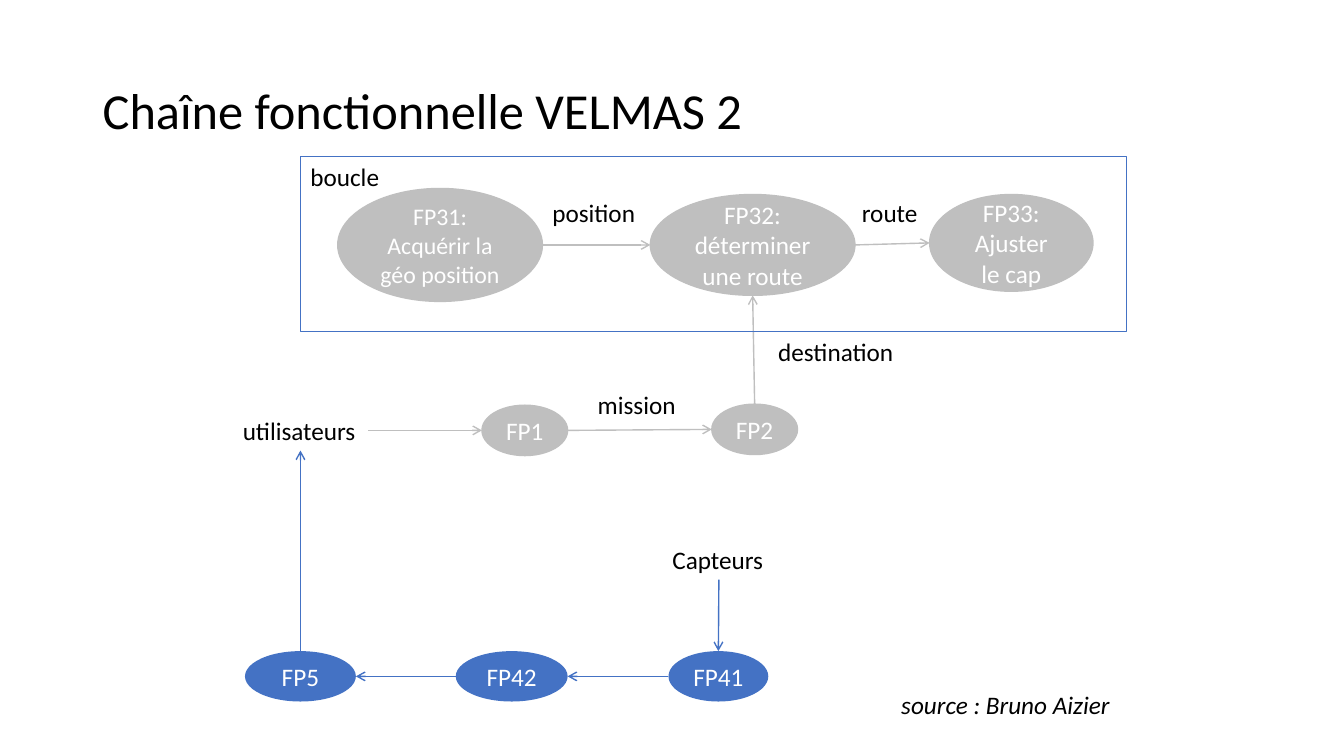
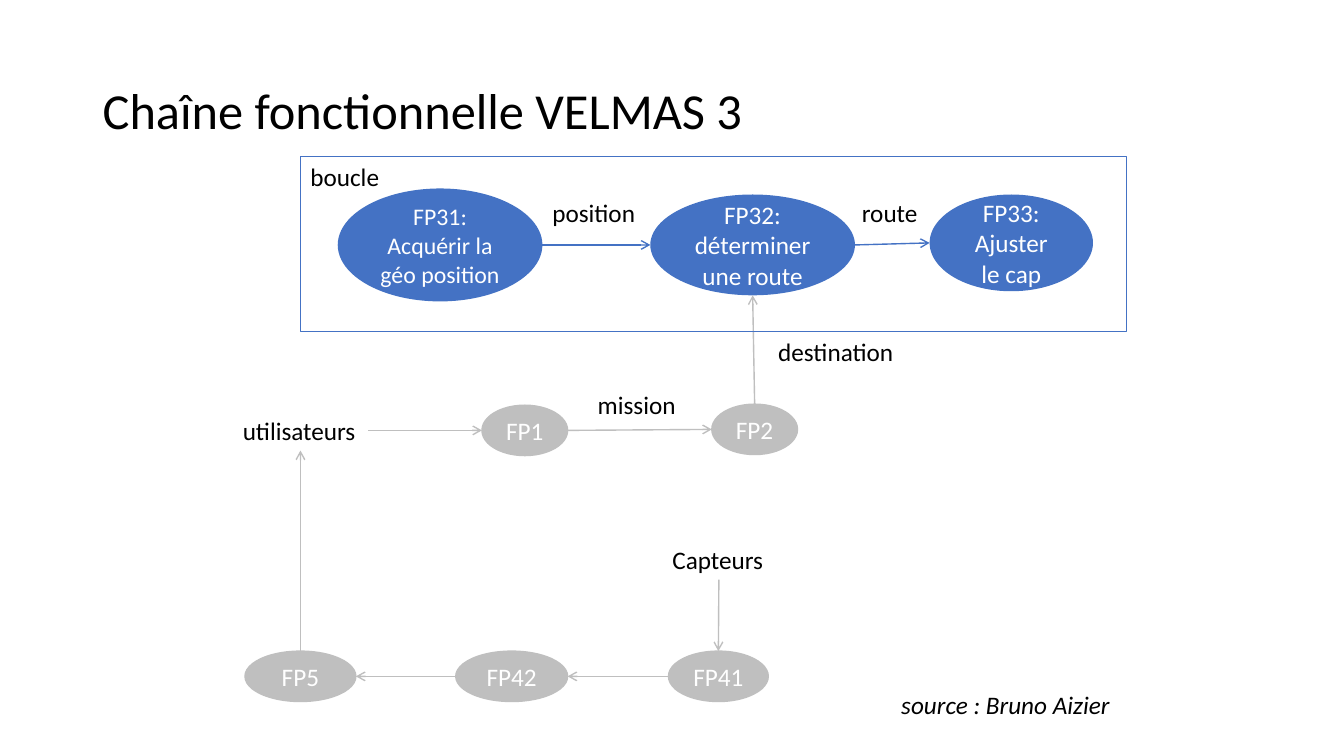
from lxml import etree
from pptx import Presentation
from pptx.dml.color import RGBColor
from pptx.enum.shapes import MSO_CONNECTOR, MSO_SHAPE
from pptx.enum.text import MSO_ANCHOR, MSO_AUTO_SIZE, PP_ALIGN
from pptx.oxml.ns import qn
from pptx.util import Inches, Pt

STRAIGHT = MSO_CONNECTOR.STRAIGHT
ELLIPSE, RECTANGLE = MSO_SHAPE.OVAL, MSO_SHAPE.RECTANGLE
TOP, MIDDLE = MSO_ANCHOR.TOP, MSO_ANCHOR.MIDDLE
LEFT, CENTER = PP_ALIGN.LEFT, PP_ALIGN.CENTER
GROW = MSO_AUTO_SIZE.SHAPE_TO_FIT_TEXT

BLACK = RGBColor(0x00, 0x00, 0x00)
WHITE = RGBColor(0xFF, 0xFF, 0xFF)
ACTIVE = RGBColor(0x44, 0x72, 0xC4)
INACTIVE = RGBColor(0xBF, 0xBF, 0xBF)

BODY_FONT = {"name": "Calibri", "size": Pt(18)}
TITLE_FONT = {**BODY_FONT, "size": Pt(36)}
COMPACT_FONT = {**BODY_FONT, "size": Pt(17)}
SOURCE_FONT = {**BODY_FONT, "italic": True}

TITLE_FRAME = {"word_wrap": True, "vertical_anchor": MIDDLE}
LABEL_FRAME = {"word_wrap": False, "auto_size": GROW}
LOOP_FRAME = {"word_wrap": True, "vertical_anchor": TOP}

TITLE_BOX = (0.92, 0.4, 11.5, 1.45)
LOOP_BOX = (2.98, 1.55, 8.19, 1.74)
SOURCE_BOX = (8.84, 6.79, 2.35, 0.4)

FUNCTIONS = {
    "FP1": ((4.78, 4.02, 0.85, 0.5), "FP1", BODY_FONT),
    "FP2": ((7.06, 4.01, 0.85, 0.5), "FP2", BODY_FONT),
    "FP32": ((6.45, 1.93, 2.03, 1), "FP32: déterminer une route", BODY_FONT),
    "FP31": ((3.35, 1.87, 2.03, 1.12), "FP31: Acquérir la\ngéo position", COMPACT_FONT),
    "FP33": ((9.22, 1.93, 1.62, 0.96), "FP33:\nAjuster le cap", BODY_FONT),
    "FP41": ((6.63, 6.46, 0.99, 0.5), "FP41", BODY_FONT),
    "FP42": ((4.52, 6.46, 1.11, 0.5), "FP42", BODY_FONT),
    "FP5": ((2.43, 6.46, 1.1, 0.5), "FP5", BODY_FONT),
}
LABELS = {
    "Capteurs": (6.57, 5.35, 1.12, 0.4),
    "utilisateurs": (2.31, 4.07, 1.34, 0.4),
    "mission": (5.83, 3.81, 0.98, 0.4),
    "destination": (7.62, 3.29, 1.36, 0.4),
    "route": (8.45, 1.91, 0.77, 0.4),
    "position": (5.38, 1.91, 1.03, 0.4),
}
SIDES = {"top": (0.5, 0), "bottom": (0.5, 1), "left": (0, 0.5), "right": (1, 0.5)}
FLOWS = [
    ("FP1", "right", "FP2", "left"),
    ("FP2", "top", "FP32", "bottom"),
    ("FP32", "right", "FP33", "left"),
    ("FP31", "right", "FP32", "left"),
    ("Capteurs", "bottom", "FP41", "top"),
    ("FP41", "left", "FP42", "right"),
    ("FP42", "left", "FP5", "right"),
    ("FP5", "top", "utilisateurs", "bottom"),
    ("utilisateurs", "right", "FP1", "left"),
]
SLIDES = [
    ("Chaîne fonctionnelle VELMAS 2", {"FP41", "FP42", "FP5", "Capteurs"}),
    ("Chaîne fonctionnelle VELMAS 3", {"FP31", "FP32", "FP33"}),
]
BOXES = {**LABELS, **{key: function[0] for key, function in FUNCTIONS.items()}}


def write(shape, text, font_format, frame_format, color=BLACK, alignment=LEFT):
    frame = shape.text_frame
    frame.text = text
    for attribute, value in frame_format.items():
        setattr(frame, attribute, value)
    for paragraph in frame.paragraphs:
        paragraph.alignment = alignment
        for run in paragraph.runs:
            for attribute, value in font_format.items():
                setattr(run.font, attribute, value)
            run.font.color.rgb = color


def side_point(key, side):
    left, top, width, height = BOXES[key]
    across, down = SIDES[side]
    return Inches(left + across * width), Inches(top + down * height)


deck = Presentation()
deck.slide_width, deck.slide_height = Inches(13.33), Inches(7.5)

for title_text, active in SLIDES:
    shapes = deck.slides.add_slide(deck.slide_layouts[6]).shapes
    title = shapes.add_textbox(*map(Inches, TITLE_BOX))
    write(title, title_text, TITLE_FONT, TITLE_FRAME)
    title.text_frame.paragraphs[0].line_spacing = 0.9

    for key, (box, text, font_format) in FUNCTIONS.items():
        function = shapes.add_shape(ELLIPSE, *map(Inches, box))
        function.shadow.inherit = False
        function.fill.solid()
        if key in active:
            function.fill.fore_color.rgb = ACTIVE
            function.line.fill.background()
        else:
            function.fill.fore_color.rgb = INACTIVE
            function.line.color.rgb = INACTIVE
            function.line.width = Pt(1)
        write(function, text, font_format, TITLE_FRAME, WHITE, CENTER)

    for source, source_side, target, target_side in FLOWS:
        start, end = side_point(source, source_side), side_point(target, target_side)
        flow = shapes.add_connector(STRAIGHT, *start, *end)
        flow.line.color.rgb = ACTIVE if source in active else INACTIVE
        flow.line.width = Pt(1)
        etree.SubElement(flow.line._get_or_add_ln(), qn("a:tailEnd"), type="arrow")
        etree.SubElement(flow._element.spPr, qn("a:effectLst"))

    for text, box in LABELS.items():
        write(shapes.add_textbox(*map(Inches, box)), text, BODY_FONT, LABEL_FRAME)

    loop = shapes.add_shape(RECTANGLE, *map(Inches, LOOP_BOX))
    loop.shadow.inherit = False
    loop.fill.background()
    loop.line.color.rgb = ACTIVE
    loop.line.width = Pt(0.5)
    write(loop, "boucle", BODY_FONT, LOOP_FRAME)

    credit = shapes.add_textbox(*map(Inches, SOURCE_BOX))
    write(credit, "source : Bruno Aizier", SOURCE_FONT, LABEL_FRAME)

deck.save("out.pptx")
